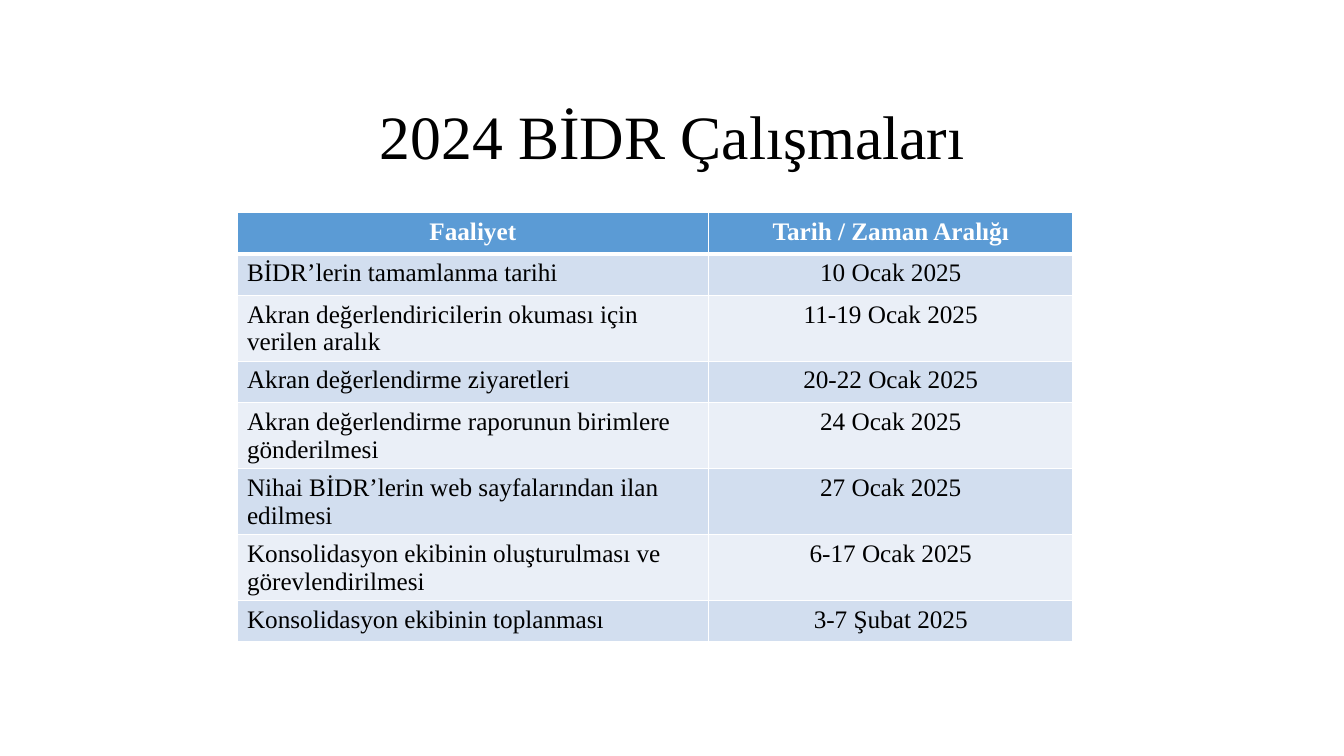
from pptx import Presentation
from pptx.dml.color import RGBColor
from pptx.enum.text import MSO_ANCHOR, MSO_AUTO_SIZE, PP_ALIGN
from pptx.oxml import parse_xml
from pptx.oxml.ns import nsdecls
from pptx.util import Inches, Pt

LEFT, CENTER = PP_ALIGN.LEFT, PP_ALIGN.CENTER
MIDDLE, FIXED = MSO_ANCHOR.MIDDLE, MSO_AUTO_SIZE.NONE

COLORS = {"text": "000000", "white": "FFFFFF", "head": "5B9BD5",
          "dark": "D2DEEF", "light": "EAEFF7"}
FACE = "Times New Roman"
WIDTH, HEIGHT = 13.33, 7.5
TITLE_BOX = (0.92, 0.95, 11.5, 0.87)
TABLE_BOX = (2.35, 2.11, 8.29, 3.29)
SPLIT = 4.68 / 8.29

TITLE = "2024 BİDR Çalışmaları"
ROWS = [
    ("Faaliyet", "Tarih / Zaman Aralığı"),
    ("BİDR’lerin tamamlanma tarihi", "10 Ocak 2025"),
    ("Akran değerlendiricilerin okuması için verilen aralık", "11-19 Ocak 2025"),
    ("Akran değerlendirme ziyaretleri", "20-22 Ocak 2025"),
    ("Akran değerlendirme raporunun birimlere gönderilmesi", "24 Ocak 2025"),
    ("Nihai BİDR’lerin web sayfalarından ilan edilmesi", "27 Ocak 2025"),
    ("Konsolidasyon ekibinin oluşturulması ve görevlendirilmesi", "6-17 Ocak 2025"),
    ("Konsolidasyon ekibinin toplanması", "3-7 Şubat 2025"),
]


def style(par, align, color, **form):
    par.alignment = align
    for key, value in {"name": FACE, **form}.items():
        setattr(par.font, key, value)
    par.font.color.rgb = RGBColor.from_string(COLORS[color])


def add_title(slide, box):
    title = slide.shapes.title
    sides = ("left", "top", "width", "height")
    for side, size in zip(sides, box):
        setattr(title, side, Inches(size))
    frame = title.text_frame
    frame.text = TITLE
    frame.auto_size = FIXED
    frame.vertical_anchor = MIDDLE
    par = frame.paragraphs[0]
    par.line_spacing = 0.9
    style(par, CENTER, "text", size=Pt(44))


def add_edges(cell, row):
    """Rule the cell in white, with a thick line under the head row."""
    widths = {"L": 1, "R": 1, "T": 3 if row == 1 else 1, "B": 3 if row == 0 else 1}
    props = cell._tc.get_or_add_tcPr()
    for side, width in widths.items():
        props.append(parse_xml(
            f'<a:ln{side} {nsdecls("a")} w="{Pt(width)}"><a:solidFill>'
            f'<a:srgbClr val="{COLORS["white"]}"/></a:solidFill></a:ln{side}>'))


def add_dates(slide, box):
    left, top, width, height = map(Inches, box)
    table = slide.shapes.add_table(len(ROWS), 2, left, top, width, height).table
    for col, share in zip(table.columns, (SPLIT, 1 - SPLIT)):
        col.width = int(width * share)
    for row, texts in enumerate(ROWS):
        head = row == 0
        fill = "head" if head else "dark" if row % 2 else "light"
        for col, text in enumerate(texts):
            cell = table.cell(row, col)
            cell.text = text
            add_edges(cell, row)
            cell.fill.solid()
            cell.fill.fore_color.rgb = RGBColor.from_string(COLORS[fill])
            style(cell.text_frame.paragraphs[0],
                  CENTER if head or col else LEFT,
                  "white" if head else "text", size=Pt(18), bold=head)


def main():
    deck = Presentation()
    deck.slide_width, deck.slide_height = Inches(WIDTH), Inches(HEIGHT)
    slide = deck.slides.add_slide(deck.slide_layouts.get_by_name("Title Only"))
    add_title(slide, TITLE_BOX)
    add_dates(slide, TABLE_BOX)
    deck.save("out.pptx")


if __name__ == "__main__":
    main()
